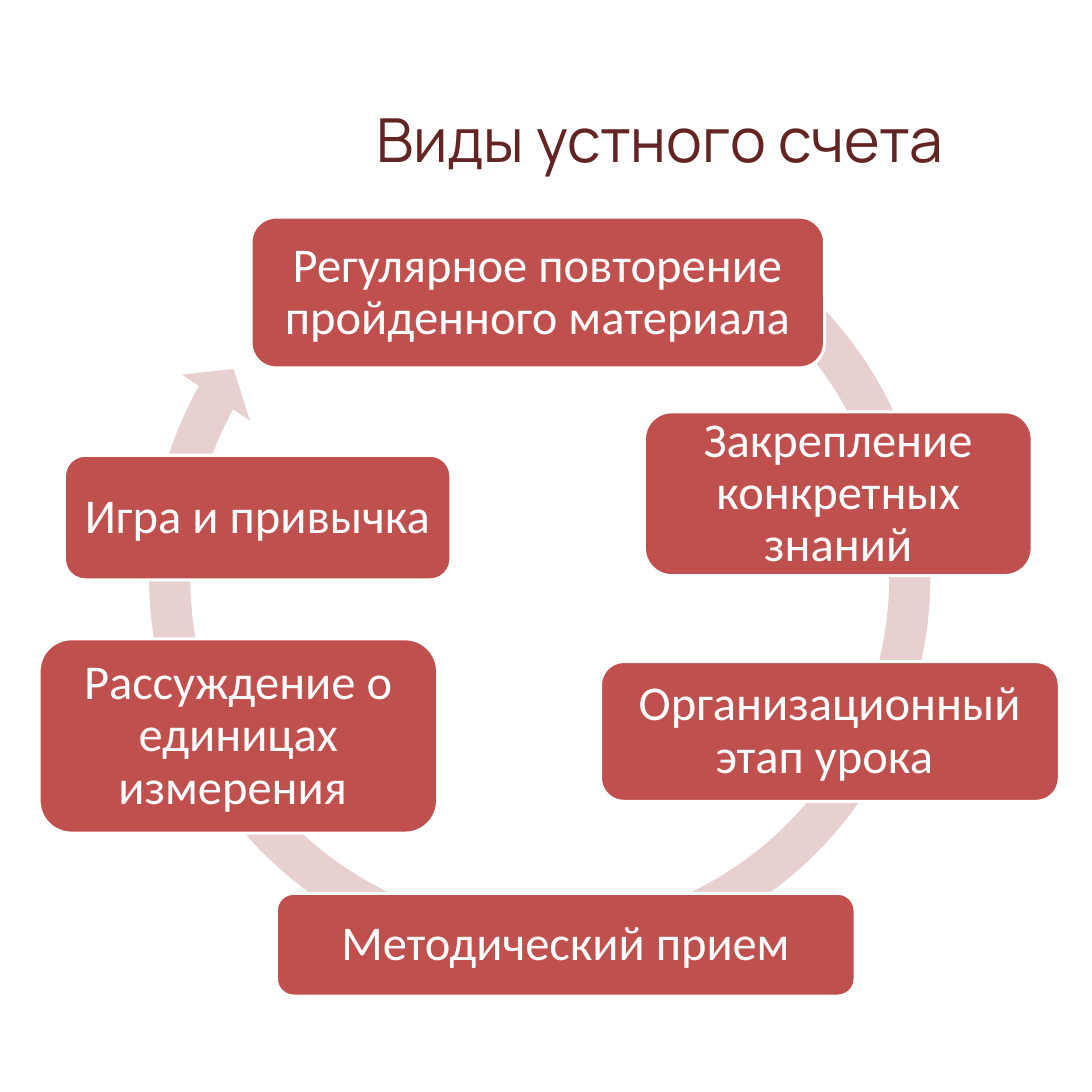
from dataclasses import dataclass

from pptx import Presentation
from pptx.dml.color import RGBColor
from pptx.enum.shapes import MSO_SHAPE
from pptx.enum.text import MSO_ANCHOR, MSO_AUTO_SIZE, PP_ALIGN
from pptx.util import Cm, Pt

RING = MSO_SHAPE.CIRCULAR_ARROW
ROUNDED = MSO_SHAPE.ROUNDED_RECTANGLE
MIDDLE = MSO_ANCHOR.MIDDLE
CENTER = PP_ALIGN.CENTER
NO_FIT = MSO_AUTO_SIZE.NONE
TITLE_ONLY = 5


@dataclass(frozen=True)
class Theme:
    dark: RGBColor = RGBColor(0x63, 0x25, 0x23)
    red: RGBColor = RGBColor(0xC0, 0x50, 0x4D)
    pale: RGBColor = RGBColor(0xE8, 0xD0, 0xD0)
    white: RGBColor = RGBColor(0xFF, 0xFF, 0xFF)
    head_font: str = "Manrope"
    body_font: str = "Calibri"
    head_size: int = 40
    body_size: int = 32


THEME = Theme()

# Text, then left, top, width and height in cm within the cycle
STEPS = [
    ("Регулярное повторение пройденного материала", 4.93, 1.19, 13.34, 3.51),
    ("Закрепление конкретных знаний", 14.08, 5.72, 9.02, 3.81),
    ("Организационный этап урока ", 13.06, 11.53, 10.67, 3.25),
    ("Методический прием", 5.52, 16.92, 13.46, 2.39),
    ("Рассуждение о единицах измерения ", 0, 11, 9.27, 4.52),
    ("Игра и привычка", 0.59, 6.73, 8.99, 2.9),
]


def set_text(frame, text, name, size, color):
    frame.text = text
    frame.word_wrap = True
    frame.auto_size = NO_FIT
    frame.vertical_anchor = MIDDLE
    para = frame.paragraphs[0]
    para.alignment = CENTER
    para.font.name = name
    para.font.size = Pt(size)
    para.font.color.rgb = color
    return para


def add_title(slide, text, left, top, width, height):
    title = slide.shapes.title
    title.left, title.top = Cm(left), Cm(top)
    title.width, title.height = Cm(width), Cm(height)
    set_text(title.text_frame, text, THEME.head_font, THEME.head_size, THEME.dark)


def add_ring(group, left, top, size):
    ring = group.shapes.add_shape(RING, Cm(left), Cm(top), Cm(size), Cm(size))
    ring.shadow.inherit = False
    ring.fill.solid()
    ring.fill.fore_color.rgb = THEME.pale
    ring.line.fill.background()
    # Band width, head angle, end angle, start angle, head width
    for i, value in enumerate((0.05, 3.13, 125.4, 182.06, 0.05)):
        ring.adjustments[i] = value


def add_step(group, text, left, top, width, height):
    step = group.shapes.add_shape(ROUNDED, Cm(left), Cm(top), Cm(width), Cm(height))
    step.shadow.inherit = False
    step.fill.solid()
    step.fill.fore_color.rgb = THEME.red
    step.line.color.rgb = THEME.white
    step.line.width = Pt(2)
    frame = step.text_frame
    frame.margin_left = frame.margin_right = Cm(0.33)
    frame.margin_top = frame.margin_bottom = Cm(0.33)
    para = set_text(frame, text, THEME.body_font, THEME.body_size, THEME.white)
    para.line_spacing = 0.9


def add_cycle(slide, left, top, size):
    """Draw the ring and its steps, with the ring as high as size."""
    group = slide.shapes.add_group_shape()
    add_ring(group, left + 2.08, top, size)
    for text, x, y, width, height in STEPS:
        add_step(group, text, left + x, top + y, width, height)


def main():
    deck = Presentation()
    deck.slide_width = deck.slide_height = Cm(25.4)
    slide = deck.slides.add_slide(deck.slide_layouts[TITLE_ONLY])
    add_title(slide, "Виды устного счета", 3.91, 1.09, 22.86, 4.24)
    add_cycle(slide, 0.91, 3.86, 19.13)
    deck.save("out.pptx")


if __name__ == "__main__":
    main()
